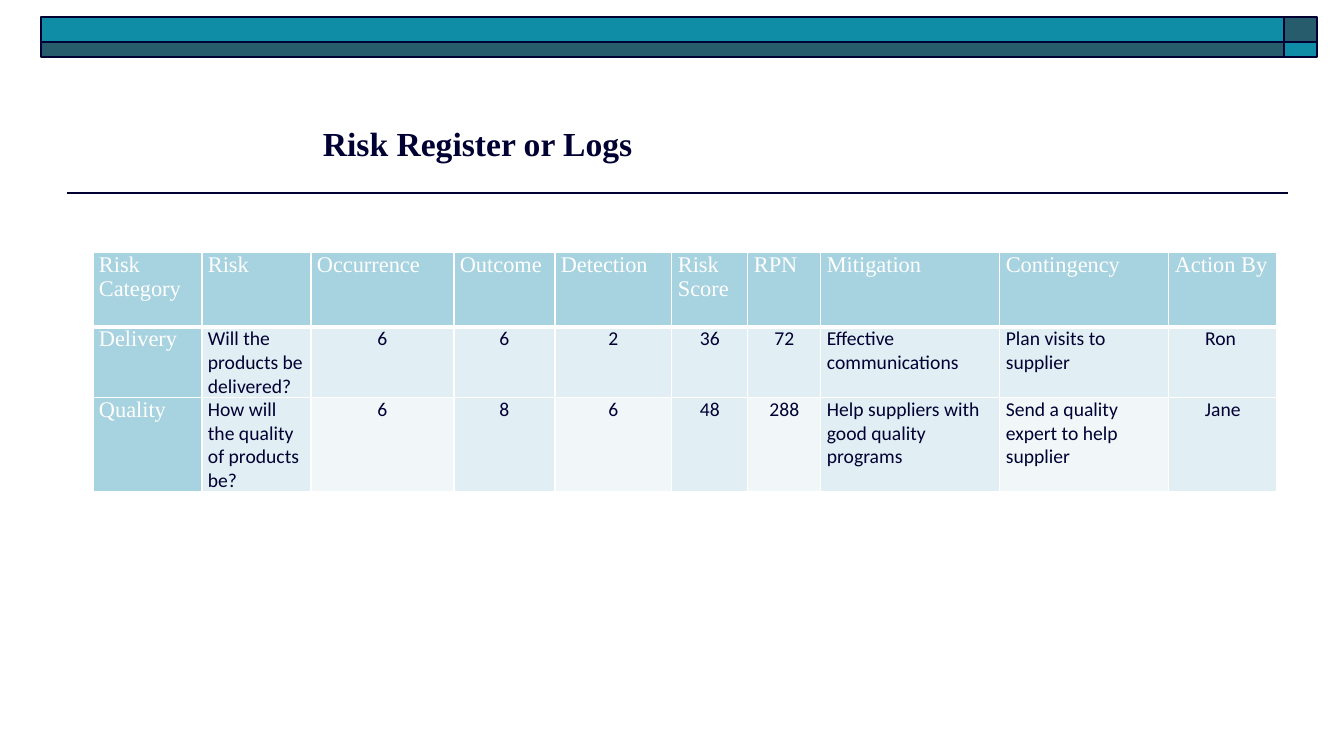
from lxml import etree
from pptx import Presentation
from pptx.dml.color import RGBColor
from pptx.enum.shapes import MSO_CONNECTOR, MSO_SHAPE
from pptx.enum.text import PP_ALIGN
from pptx.oxml.ns import qn
from pptx.util import Pt

SCALE = 914400 / 100.8
RECT = MSO_SHAPE.RECTANGLE
LINE = MSO_CONNECTOR.STRAIGHT
LEFT = PP_ALIGN.LEFT
CENTER = PP_ALIGN.CENTER

COLORS = {
    "ink": "000033",
    "teal": "108DA6",
    "dark": "275C6D",
    "white": "FFFFFF",
    "head": "A7D2DF",
    "band": "E1EEF3",
    "pale": "F1F7F9",
}
WIDTHS = [109, 109, 143, 101, 117, 76, 73, 179, 169, 108]
HEIGHTS = [75, 68, 76]
MIDDLE = {2, 3, 4, 5, 6, 9}
ROWS = [
    ["Risk Category", "Risk", "Occurrence", "Outcome", "Detection",
     "Risk Score", "RPN", "Mitigation", "Contingency", "Action By"],
    ["Delivery", "Will the products be delivered?", "6", "6", "2", "36", "72",
     "Effective communications", "Plan visits to supplier", "Ron "],
    ["Quality", "How will the quality of products be?", "6", "8", "6", "48",
     "288", "Help suppliers with good quality programs",
     "Send a quality expert to help supplier", "Jane"],
]


def px(n):
    return round(n * SCALE)


def color(name):
    return RGBColor.from_string(COLORS[name])


def style(par, font, size, ink, bold=False):
    for run in par.runs:
        run.font.name = font
        run.font.size = Pt(size)
        run.font.bold = bold
        run.font.color.rgb = color(ink)


def banner(slide, left, top, width, height):
    side, upper = 33, 25
    cols = [(left, width - side), (left + width - side, side)]
    rows = [(top, upper), (top + upper, height - upper)]
    for i, (y, h) in enumerate(rows):
        for j, (x, w) in enumerate(cols):
            bar = slide.shapes.add_shape(RECT, px(x), px(y), px(w), px(h))
            bar.shadow.inherit = False
            bar.fill.solid()
            bar.fill.fore_color.rgb = color("teal" if i == j else "dark")
            bar.line.color.rgb = color("ink")
            bar.line.width = Pt(1)


def rule(slide, left, top, width):
    line = slide.shapes.add_connector(
        LINE, px(left + width), px(top), px(left), px(top))
    line.line.color.rgb = color("ink")
    line.line.width = Pt(1)
    etree.SubElement(line._element.spPr, qn("a:effectLst"))


def title(slide, left, top, width, height):
    box = slide.shapes.add_textbox(px(left), px(top), px(width), px(height))
    frame = box.text_frame
    frame.word_wrap = True
    frame.text = "Risk Register or Logs"
    par = frame.paragraphs[0]
    par.space_before = Pt(3)
    style(par, "Times New Roman", 24, "ink", True)


def border(cell, bottom):
    props = cell._tc.get_or_add_tcPr()
    for side, width in (("L", 1), ("R", 1), ("T", 1), ("B", bottom)):
        line = etree.SubElement(props, qn("a:ln" + side), w=str(Pt(width)))
        fill = etree.SubElement(line, qn("a:solidFill"))
        etree.SubElement(fill, qn("a:srgbClr"), val=COLORS["white"])


def fill_cell(cell, text, row, col):
    head = row == 0 or col == 0
    border(cell, 3 if row == 0 else 1)
    if head:
        back = "head"
    else:
        back = "pale" if row == 2 and col % 2 == 0 else "band"
    cell.fill.solid()
    cell.fill.fore_color.rgb = color(back)
    cell.margin_left = cell.margin_right = px(6)
    cell.margin_top = cell.margin_bottom = 0
    cell.text_frame.text = text
    par = cell.text_frame.paragraphs[0]
    par.alignment = CENTER if not head and col in MIDDLE else LEFT
    if head:
        style(par, "Times New Roman", 16, "white")
    else:
        style(par, "Calibri", 14, "ink")


def register(slide, left, top):
    table = slide.shapes.add_table(
        len(ROWS), len(WIDTHS), px(left), px(top),
        px(sum(WIDTHS)), px(sum(HEIGHTS))).table
    for col, width in zip(table.columns, WIDTHS):
        col.width = px(width)
    for r, texts in enumerate(ROWS):
        table.rows[r].height = px(HEIGHTS[r])
        for c, text in enumerate(texts):
            fill_cell(table.cell(r, c), text, r, c)


def main():
    deck = Presentation()
    deck.slide_width = px(1344)
    deck.slide_height = px(756)
    slide = deck.slides.add_slide(deck.slide_layouts[6])
    rule(slide, 67, 193, 1221)
    banner(slide, 41, 17, 1276, 40)
    title(slide, 313, 118, 432, 37)
    register(slide, 93, 252)
    deck.save("out.pptx")


if __name__ == "__main__":
    main()
